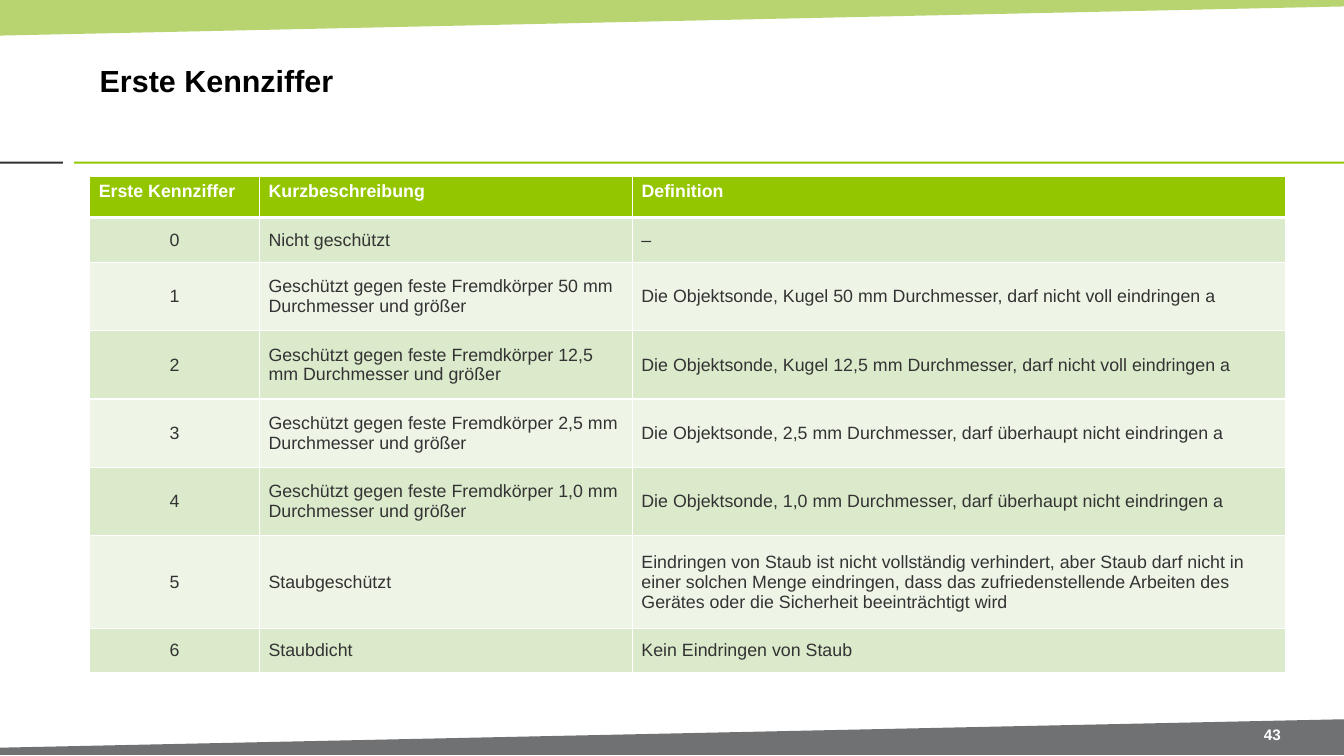
from dataclasses import dataclass

import lxml.etree
import pptx
import pptx.dml.color
import pptx.enum.shapes
import pptx.enum.text
import pptx.oxml.ns
import pptx.util

Cm = pptx.util.Cm
ALIGN = pptx.enum.text.PP_ALIGN
ANCHOR = pptx.enum.text.MSO_ANCHOR


@dataclass(frozen=True)
class Theme:
    font: str = "Arial"
    white: str = "FFFFFF"
    black: str = "000000"
    body: str = "333333"
    green: str = "94C600"
    top_band: str = "95C02A"
    bottom_band: str = "707173"
    dark_rule: str = "313130"
    stripes: tuple = ("DCEACC", "EEF5E7")
    title_size: int = 24
    table_size: int = 14
    number_size: int = 12


THEME = Theme()
SLIDE_WIDTH, SLIDE_HEIGHT = 37.34, 21.01
COLUMN_WIDTHS = (4.72, 10.36, 18.14)
ROW_HEIGHTS = (1.14, 1.24, 1.9, 1.9, 1.9, 1.9, 2.57, 1.24)
HEADINGS = ("Erste Kennziffer", "Kurzbeschreibung", "Definition")
PROTECTION_LEVELS = (
    ("Nicht geschützt", "–"),
    ("Geschützt gegen feste Fremdkörper 50 mm Durchmesser und größer",
     "Die Objektsonde, Kugel 50 mm Durchmesser, darf nicht voll eindringen a"),
    ("Geschützt gegen feste Fremdkörper 12,5 mm Durchmesser und größer",
     "Die Objektsonde, Kugel 12,5 mm Durchmesser, darf nicht voll eindringen a"),
    ("Geschützt gegen feste Fremdkörper 2,5 mm Durchmesser und größer",
     "Die Objektsonde, 2,5 mm Durchmesser, darf überhaupt nicht eindringen a"),
    ("Geschützt gegen feste Fremdkörper 1,0 mm Durchmesser und größer",
     "Die Objektsonde, 1,0 mm Durchmesser, darf überhaupt nicht eindringen a"),
    ("Staubgeschützt",
     "Eindringen von Staub ist nicht vollständig verhindert, aber Staub darf "
     "nicht in einer solchen Menge eindringen, dass das zufriedenstellende "
     "Arbeiten des Gerätes oder die Sicherheit beeinträchtigt wird"),
    ("Staubdicht", "Kein Eindringen von Staub"),
)


def rgb(color):
    return pptx.dml.color.RGBColor.from_string(color)


def write(frame, text, *, size, color, bold=False, align=ALIGN.LEFT):
    paragraph = frame.paragraphs[0]
    paragraph.alignment = align
    run = paragraph.add_run()
    run.text = text
    run.font.name = THEME.font
    run.font.size = pptx.util.Pt(size)
    run.font.bold = bold
    run.font.color.rgb = rgb(color)


def paint(shape, color):
    """Give a shape a plain fill without outline or shadow."""
    shape.fill.solid()
    shape.fill.fore_color.rgb = rgb(color)
    shape.line.fill.background()
    shape.shadow.inherit = False


def add_band(slide, corners, color, opacity=100):
    """Draw a slanted band through corners given in centimetres."""
    points = [(Cm(x), Cm(y)) for x, y in corners]
    builder = slide.shapes.build_freeform(*points[0])
    builder.add_line_segments(points[1:], close=True)
    band = builder.convert_to_shape()
    paint(band, color)
    if opacity < 100:
        color_element = band.fill._xPr.find(".//" + pptx.oxml.ns.qn("a:srgbClr"))
        lxml.etree.SubElement(color_element, pptx.oxml.ns.qn("a:alpha"),
                              val=str(opacity * 1000))


def add_rule(slide, left, width, color):
    rule = slide.shapes.add_shape(pptx.enum.shapes.MSO_SHAPE.RECTANGLE,
                                  Cm(left), Cm(4.49), Cm(width), Cm(0.06))
    paint(rule, color)


def add_label(slide, text, left, top, width, height, **text_format):
    frame = slide.shapes.add_textbox(Cm(left), Cm(top), Cm(width), Cm(height)).text_frame
    frame.word_wrap = True
    frame.vertical_anchor = ANCHOR.MIDDLE
    frame.margin_left = frame.margin_right = Cm(0.28)
    frame.margin_top = frame.margin_bottom = Cm(0.15)
    write(frame, text, bold=True, **text_format)


def set_borders(cell, **points):
    """Draw white cell borders, with the width in points for each side."""
    properties = cell._tc.get_or_add_tcPr()
    for side in "LRTB":
        line = lxml.etree.SubElement(properties, pptx.oxml.ns.qn("a:ln" + side),
                                     w=str(pptx.util.Pt(points.get(side, 1))))
        fill = lxml.etree.SubElement(line, pptx.oxml.ns.qn("a:solidFill"))
        lxml.etree.SubElement(fill, pptx.oxml.ns.qn("a:srgbClr"), val=THEME.white)


def fill_cell(cell, color):
    cell.fill.solid()
    cell.fill.fore_color.rgb = rgb(color)


def add_heading_cell(cell, heading):
    set_borders(cell, B=3)
    fill_cell(cell, THEME.green)
    write(cell.text_frame, heading, size=THEME.table_size, color=THEME.white, bold=True)


def add_level_cell(cell, text, level, align):
    set_borders(cell, T=3 if level == 0 else 1)
    fill_cell(cell, THEME.stripes[level % 2])
    cell.vertical_anchor = ANCHOR.MIDDLE
    cell.margin_left = cell.margin_right = Cm(0.25)
    cell.margin_top = cell.margin_bottom = Cm(0.25)
    write(cell.text_frame, text, size=THEME.table_size, color=THEME.body, align=align)


def add_protection_table(slide):
    table = slide.shapes.add_table(
        len(ROW_HEIGHTS), len(COLUMN_WIDTHS), Cm(2.49), Cm(4.91),
        Cm(sum(COLUMN_WIDTHS)), Cm(sum(ROW_HEIGHTS))).table
    table.horz_banding = False
    for column, width in zip(table.columns, COLUMN_WIDTHS):
        column.width = Cm(width)
    for row, height in zip(table.rows, ROW_HEIGHTS):
        row.height = Cm(height)
    for column, heading in enumerate(HEADINGS):
        add_heading_cell(table.cell(0, column), heading)
    for level, descriptions in enumerate(PROTECTION_LEVELS):
        for column, text in enumerate((str(level), *descriptions)):
            align = ALIGN.CENTER if column == 0 else ALIGN.LEFT
            add_level_cell(table.cell(level + 1, column), text, level, align)


def main():
    presentation = pptx.Presentation()
    presentation.slide_width = Cm(SLIDE_WIDTH)
    presentation.slide_height = Cm(SLIDE_HEIGHT)
    slide = presentation.slides.add_slide(presentation.slide_layouts[6])

    add_band(slide, ((0, 0), (SLIDE_WIDTH, 0), (SLIDE_WIDTH, 0.18), (0, 0.99)),
             THEME.top_band, opacity=67)
    add_rule(slide, 0, 1.75, THEME.dark_rule)
    add_rule(slide, 2.06, SLIDE_WIDTH - 2.06, THEME.green)
    add_band(slide, ((SLIDE_WIDTH, 20.98), (0, 20.98), (0, 20.78), (SLIDE_WIDTH, 19.99)),
             THEME.bottom_band)
    add_label(slide, "Erste Kennziffer", 2.49, 0.71, 29.31, 3.02,
              size=THEME.title_size, color=THEME.black)
    add_label(slide, "43", 34.26, 20.04, 2.18, 0.74,
              size=THEME.number_size, color=THEME.white, align=ALIGN.CENTER)
    add_protection_table(slide)
    presentation.save("out.pptx")


if __name__ == "__main__":
    main()
